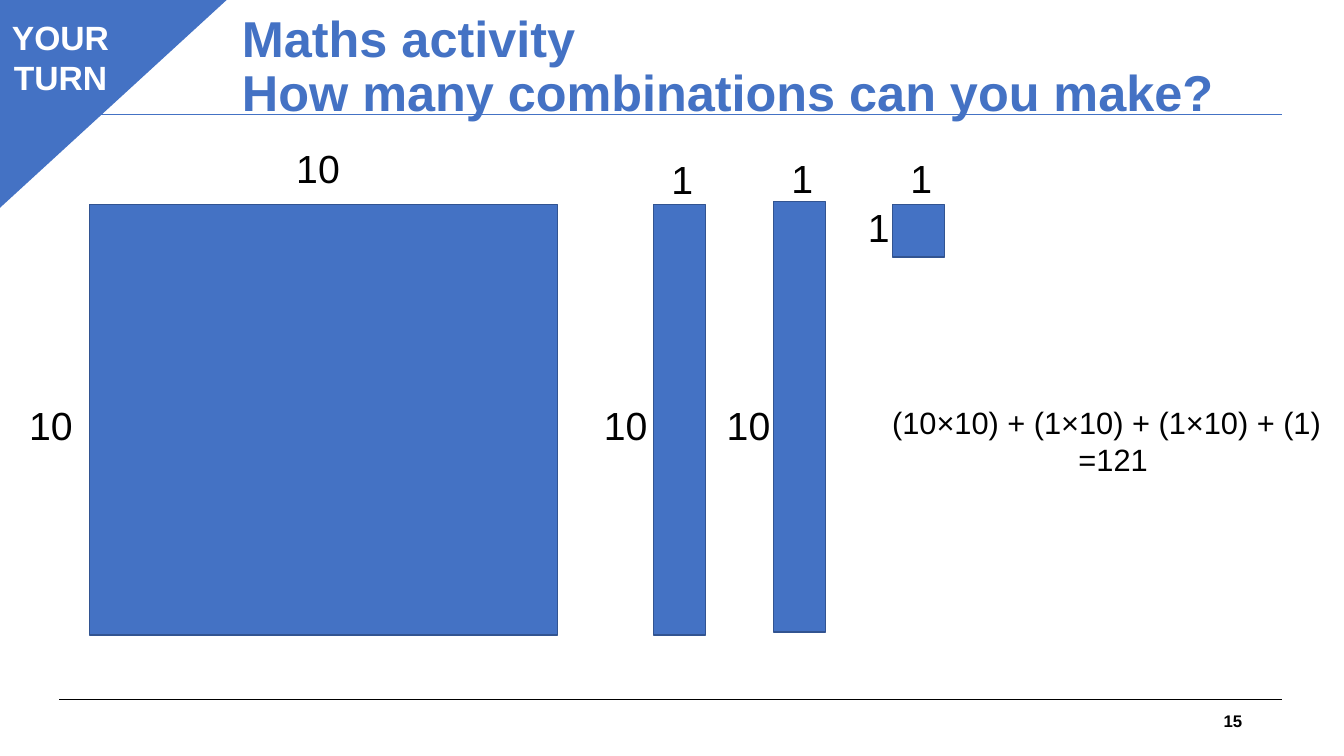
from dataclasses import dataclass

from lxml.etree import SubElement
from pptx import Presentation
from pptx.dml.color import RGBColor
from pptx.enum.shapes import MSO_CONNECTOR as Connector, MSO_SHAPE as Preset
from pptx.enum.text import MSO_ANCHOR as Anchor, MSO_AUTO_SIZE as AutoSize, PP_ALIGN as Align
from pptx.oxml.ns import qn
from pptx.shapes.autoshape import Shape
from pptx.slide import Slide
from pptx.text.text import TextFrame
from pptx.util import Inches, Pt


@dataclass(frozen=True)
class Theme:
    font: str = "Arial"
    blue: RGBColor = RGBColor(0x44, 0x72, 0xC4)
    outline: RGBColor = RGBColor(0x32, 0x54, 0x91)
    black: RGBColor = RGBColor(0, 0, 0)
    white: RGBColor = RGBColor(0xFF, 0xFF, 0xFF)
    title_size: int = 36
    label_size: int = 28
    badge_size: int = 24
    sum_size: int = 22
    number_size: int = 12


@dataclass(frozen=True)
class Box:
    left: float
    top: float
    width: float
    height: float

    def lengths(self) -> list[Inches]:
        return [Inches(value) for value in (self.left, self.top, self.width, self.height)]


@dataclass(frozen=True)
class Label:
    text: str
    left: float
    top: float


@dataclass(frozen=True)
class Block:
    box: Box
    labels: tuple[Label, ...]


@dataclass(frozen=True)
class Rule:
    top: float
    color: RGBColor


THEME = Theme()
LONG, UNIT = 4.27, 0.52
SIDE_TOP = 3.93
LABEL_WIDTH, LABEL_HEIGHT = 1.53, 0.57
RULE_LEFT, RULE_RIGHT = 0.59, 12.72
RULES = (Rule(6.94, THEME.black), Rule(1.14, THEME.blue))
BLOCKS = (
    Block(Box(0.89, 2.03, 4.64, LONG), (Label("10", 2.84, 1.38), Label("10", 0.19, SIDE_TOP))),
    Block(Box(6.48, 2.03, UNIT, LONG), (Label("1", 6.56, 1.49), Label("10", 5.89, SIDE_TOP))),
    Block(Box(7.67, 2, UNIT, LONG), (Label("1", 7.75, 1.48), Label("10", 7.11, SIDE_TOP))),
    Block(Box(8.85, 2.03, UNIT, UNIT), (Label("1", 8.93, 1.48), Label("1", 8.51, 1.97))),
)


def write_text(frame: TextFrame, text: str, size: int, color: RGBColor, bold: bool = False,
               align: Align = Align.LEFT, anchor: Anchor = Anchor.TOP) -> None:
    frame.text = text
    frame.word_wrap = True
    frame.auto_size = AutoSize.NONE
    frame.vertical_anchor = anchor
    for paragraph in frame.paragraphs:
        paragraph.alignment = align
        for run in paragraph.runs:
            run.font.name = THEME.font
            run.font.size = Pt(size)
            run.font.bold = bold
            run.font.color.rgb = color


def add_filled(slide: Slide, preset: Preset, box: Box, outline: RGBColor, weight: float = 1) -> Shape:
    shape = slide.shapes.add_shape(preset, *box.lengths())
    shape.shadow.inherit = False
    shape.fill.solid()
    shape.fill.fore_color.rgb = THEME.blue
    shape.line.color.rgb = outline
    shape.line.width = Pt(weight)
    return shape


def add_text(slide: Slide, box: Box, text: str, size: int, bold: bool = False,
             align: Align = Align.LEFT, anchor: Anchor = Anchor.TOP) -> TextFrame:
    frame = slide.shapes.add_textbox(*box.lengths()).text_frame
    write_text(frame, text, size, THEME.black, bold, align, anchor)
    return frame


def add_rule(slide: Slide, rule: Rule) -> None:
    line = slide.shapes.add_connector(Connector.STRAIGHT, Inches(RULE_LEFT), Inches(rule.top),
                                      Inches(RULE_RIGHT), Inches(rule.top))
    line.line.color.rgb = rule.color
    line.line.width = Pt(0.75)
    SubElement(line._element.spPr, qn("a:effectLst"))


def add_title(slide: Slide) -> None:
    title = slide.shapes.title
    title.left, title.top, title.width, title.height = Box(2.3, 0.12, 10.89, 1.11).lengths()
    write_text(title.text_frame, "Maths activity\nHow many combinations can you make?",
               THEME.title_size, THEME.blue, True, anchor=Anchor.MIDDLE)
    for paragraph in title.text_frame.paragraphs:
        paragraph.line_spacing = 0.9
        paragraph.space_before = Pt(0)


def add_badge(slide: Slide) -> None:
    corner = add_filled(slide, Preset.ISOSCELES_TRIANGLE, Box(-0.03, -0.02, 2.29, 2.1), THEME.blue)
    corner.adjustments[0] = 0
    corner._element.spPr.xfrm.set("flipV", "1")
    badge = add_filled(slide, Preset.RECTANGLE, Box(0.01, 0.12, 1.18, 0.83), THEME.blue, 0.75)
    write_text(badge.text_frame, "YOUR\nTURN", THEME.badge_size, THEME.white, True, Align.CENTER)


def add_block(slide: Slide, block: Block) -> None:
    add_filled(slide, Preset.RECTANGLE, block.box, THEME.outline)
    for label in block.labels:
        add_text(slide, Box(label.left, label.top, LABEL_WIDTH, LABEL_HEIGHT),
                 label.text, THEME.label_size)


def main() -> None:
    presentation = Presentation()
    presentation.slide_width, presentation.slide_height = Inches(13.33), Inches(7.5)
    slide = presentation.slides.add_slide(presentation.slide_layouts[5])
    for rule in RULES:
        add_rule(slide, rule)
    add_title(slide)
    add_text(slide, Box(9.42, 6.95, 3, 0.4), "15", THEME.number_size, True, Align.RIGHT, Anchor.MIDDLE)
    add_badge(slide)
    total = add_text(slide, Box(8.75, 3.96, 4.58, 0.84), "(10×10) + (1×10) + (1×10) + (1)\n=121",
                     THEME.sum_size)
    total.paragraphs[1].alignment = Align.CENTER
    for block in BLOCKS:
        add_block(slide, block)
    presentation.save("out.pptx")


if __name__ == "__main__":
    main()
